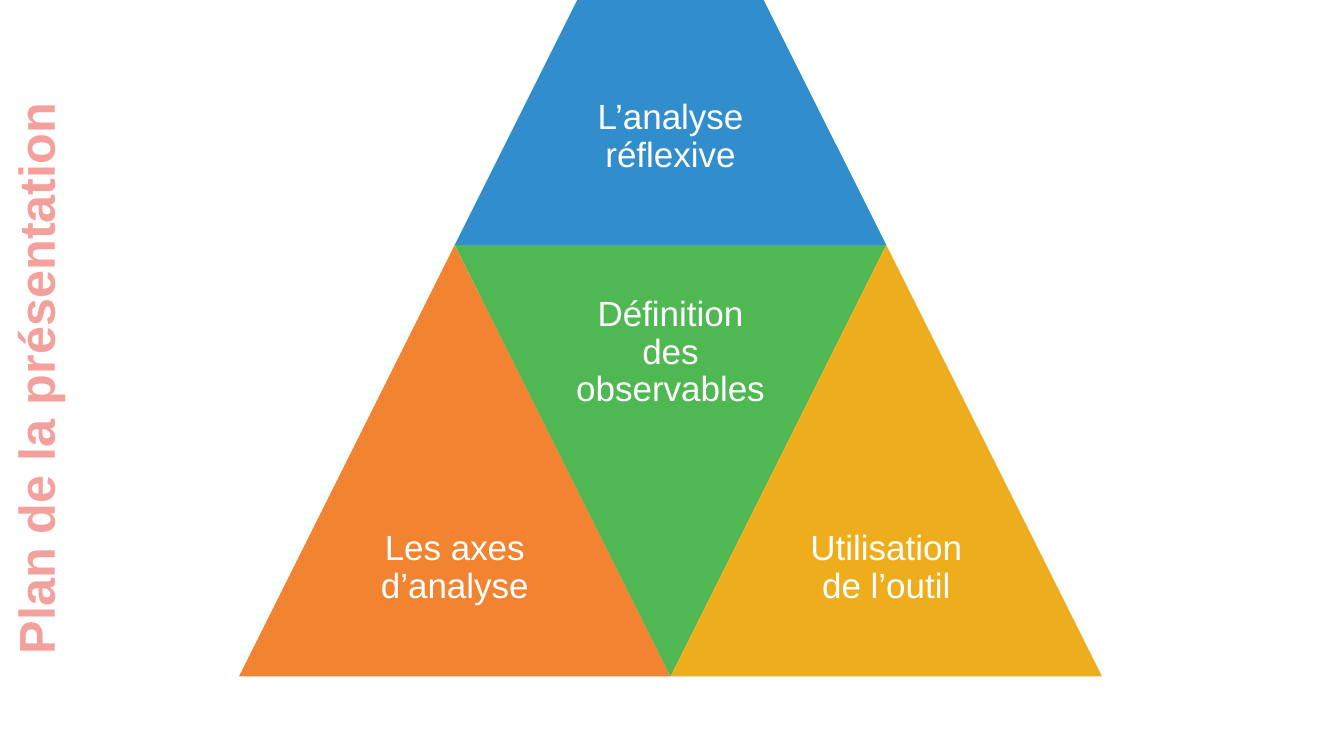
from pptx import Presentation
from pptx.dml.color import RGBColor
from pptx.enum.shapes import MSO_SHAPE
from pptx.enum.text import MSO_ANCHOR, PP_ALIGN
from pptx.util import Emu, Pt

EMU_PER_PX = 9144
SIDE = 428
HALF = SIDE // 2
QUARTER = SIDE // 4
APEX_LEFT, APEX_TOP = 451, -185
MIDDLE_TOP = APEX_TOP + SIDE

FONT = "Arial"
WHITE = RGBColor(0xFF, 0xFF, 0xFF)
PINK = RGBColor(0xF3, 0xA1, 0x9D)
BLUE = RGBColor(0x31, 0x8D, 0xCB)
ORANGE = RGBColor(0xF2, 0x83, 0x30)
GREEN = RGBColor(0x50, 0xB8, 0x52)
YELLOW = RGBColor(0xEE, 0xAD, 0x1D)

TRIANGLES = [
    ("L’analyse réflexive", APEX_LEFT, APEX_TOP, BLUE, False),
    ("Les axes d’analyse", APEX_LEFT - HALF, MIDDLE_TOP, ORANGE, False),
    ("Définition des observables", APEX_LEFT, MIDDLE_TOP, GREEN, True),
    ("Utilisation de l’outil", APEX_LEFT + HALF, MIDDLE_TOP, YELLOW, False),
]


def px(value):
    return Emu(value * EMU_PER_PX)


def add_text(slide, text, left, top, width, height, size, color, bold=False):
    box = slide.shapes.add_textbox(px(left), px(top), px(width), px(height))
    frame = box.text_frame
    frame.word_wrap = True
    paragraph = frame.paragraphs[0]
    paragraph.alignment = PP_ALIGN.CENTER
    run = paragraph.add_run()
    run.text = text
    run.font.name = FONT
    run.font.size = Pt(size)
    run.font.bold = bold
    run.font.color.rgb = color
    return box


def add_title(slide, text):
    box = add_text(slide, text, -340, 340, 750, 71, 36, PINK, bold=True)
    box.rotation = 270


def add_triangle(slide, text, left, top, color, inverted):
    shape = slide.shapes.add_shape(
        MSO_SHAPE.ISOSCELES_TRIANGLE, px(left), px(top), px(SIDE), px(SIDE))
    shape.shadow.inherit = False
    shape.fill.solid()
    shape.fill.fore_color.rgb = color
    shape.line.fill.background()
    shape.rotation = 180 if inverted else 0

    label_top = top if inverted else top + HALF
    label = add_text(slide, text, left + QUARTER, label_top, HALF, HALF, 25, WHITE)
    frame = label.text_frame
    frame.vertical_anchor = MSO_ANCHOR.MIDDLE
    frame.margin_left = frame.margin_right = px(10)
    frame.margin_top = frame.margin_bottom = px(10)
    frame.paragraphs[0].line_spacing = 0.9


def main():
    presentation = Presentation()
    presentation.slide_width = px(1333)
    presentation.slide_height = px(750)
    slide = presentation.slides.add_slide(presentation.slide_layouts[6])
    add_title(slide, "Plan de la présentation")
    for triangle in TRIANGLES:
        add_triangle(slide, *triangle)
    presentation.save("out.pptx")


if __name__ == "__main__":
    main()
